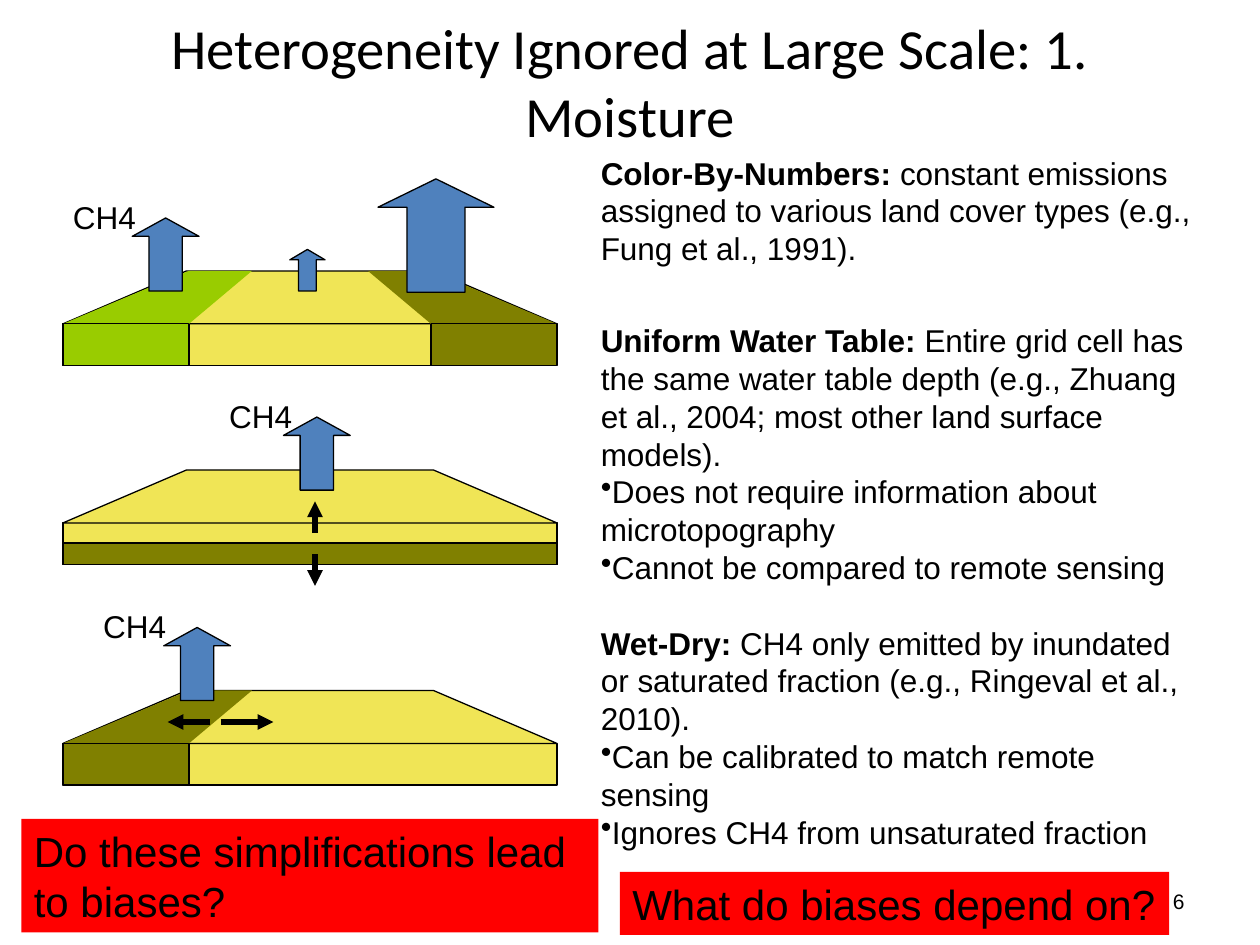
from dataclasses import dataclass

from lxml import etree
from pptx import Presentation
from pptx.dml.color import RGBColor
from pptx.enum.shapes import MSO_CONNECTOR, MSO_SHAPE
from pptx.enum.text import MSO_ANCHOR, MSO_AUTO_SIZE, PP_ALIGN
from pptx.oxml.ns import qn
from pptx.util import Inches, Pt

RECTANGLE = MSO_SHAPE.RECTANGLE
TRIANGLE = MSO_SHAPE.RIGHT_TRIANGLE
UP_ARROW = MSO_SHAPE.UP_ARROW
STRAIGHT = MSO_CONNECTOR.STRAIGHT
TOP, MIDDLE = MSO_ANCHOR.TOP, MSO_ANCHOR.MIDDLE
LEFT, CENTER, RIGHT = PP_ALIGN.LEFT, PP_ALIGN.CENTER, PP_ALIGN.RIGHT

BLACK = RGBColor(0x00, 0x00, 0x00)
SAND = RGBColor(0xF0, 0xE5, 0x56)
GREEN = RGBColor(0x99, 0xCC, 0x00)
OLIVE = RGBColor(0x80, 0x80, 0x00)
BLUE = RGBColor(0x4F, 0x81, 0xBD)
RED = RGBColor(0xFF, 0x00, 0x00)

# Shared geometry of the three land slabs, in inches
SLAB_LEFT, SLAB_WIDTH = 0.5, 3.92
SLAB_RIGHT = SLAB_LEFT + SLAB_WIDTH
SURFACE, THICKNESS = 0.42, 0.33
BEVEL = 0.98
WEDGE, WEDGE_TIP = 1.0, 0.5
MOISTURE, WATER_TABLE, WET_DRY = 2.15, 3.73, 5.48


@dataclass
class Emission:
    left: float
    top: float
    width: float = 0.53
    height: float = 0.58
    head: float = 0.275


@dataclass
class Motion:
    start: tuple[float, float]
    end: tuple[float, float]


@dataclass
class Note:
    top: float
    height: float
    heading: str
    body: str
    bullets: tuple[str, ...] = ()


@dataclass
class Label:
    text: str
    left: float
    top: float
    width: float
    height: float
    size: float = 18
    font: str = "Arial"
    align: PP_ALIGN = LEFT
    anchor: MSO_ANCHOR = TOP
    wrap: bool = True
    fill: RGBColor | None = None


EMISSIONS = [
    Emission(1.05, 1.73),
    Emission(2.3, 1.98, 0.28, 0.33, 0.296),
    Emission(3, 1.42, 0.92, 0.9, 0.25),
    Emission(2.25, 3.31),
    Emission(1.3, 4.98),
]
MOTIONS = [
    Motion((1.75, 5.73), (2.17, 5.73)),
    Motion((1.67, 5.73), (1.33, 5.73)),
    Motion((2.5, 4.23), (2.5, 3.98)),
    Motion((2.5, 4.4), (2.5, 4.65)),
]
NOTES = [
    Note(1.17, 1, "Color-By-Numbers:",
         " constant emissions assigned to various land cover types "
         "(e.g., Fung et al., 1991)."),
    Note(2.5, 2.22, "Uniform Water Table:",
         " Entire grid cell has the same water table depth (e.g., Zhuang "
         "et al., 2004; most other land surface models).",
         ("Does not require information about microtopography",
          "Cannot be compared to remote sensing")),
    Note(4.9, 1.9, "Wet-Dry:",
         " CH4 only emitted by inundated or saturated fraction "
         "(e.g., Ringeval et al., 2010).",
         ("Can be calibrated to match remote sensing",
          "Ignores CH4 from unsaturated fraction")),
]
GAS_LABELS = [(0.48, 1.52), (1.72, 3.1), (0.72, 4.77)]
LABELS = [
    Label("Heterogeneity Ignored at Large Scale: 1. Moisture", 0.5, 0.17, 9, 0.95,
          32.4, "Calibri", CENTER, MIDDLE),
    Label("6", 7.17, 6.95, 2.33, 0.4, 12, align=RIGHT, anchor=MIDDLE),
    *(Label("CH4", left, top, 0.7, 0.4, wrap=False) for left, top in GAS_LABELS),
    Label("Do these simplifications lead to biases?", 0.17, 6.5, 4.58, 0.9, 24, fill=RED),
    Label("What do biases depend on?", 4.92, 6.92, 4.36, 0.5, 24, wrap=False, fill=RED),
]


def paint(shape, fill: RGBColor, outlined: bool = True) -> None:
    shape.shadow.inherit = False
    shape.fill.solid()
    shape.fill.fore_color.rgb = fill
    if outlined:
        shape.line.color.rgb = BLACK
        shape.line.width = Pt(0.75)
    else:
        shape.line.fill.background()


def add_preset(page, kind, left: float, top: float, width: float, height: float,
               fill: RGBColor, outlined: bool = True):
    shape = page.shapes.add_shape(kind, Inches(left), Inches(top),
                                  Inches(width), Inches(height))
    paint(shape, fill, outlined)
    return shape


def add_slab(page, top: float) -> None:
    edge = top + SURFACE
    add_preset(page, RECTANGLE, SLAB_LEFT, edge, SLAB_WIDTH, THICKNESS, SAND)
    outline = page.shapes.build_freeform(Inches(SLAB_RIGHT), Inches(edge))
    corners = [(SLAB_RIGHT - BEVEL, top), (SLAB_LEFT + BEVEL, top), (SLAB_LEFT, edge)]
    outline.add_line_segments([(Inches(x), Inches(y)) for x, y in corners], close=True)
    paint(outline.convert_to_shape(), SAND)


def add_wedge(page, top: float, fill: RGBColor, on_left: bool = True) -> None:
    """Colour one end of a slab: sloping side, front face and inner tip."""
    left = SLAB_LEFT if on_left else SLAB_RIGHT - WEDGE
    tip_left = left + WEDGE if on_left else left - WEDGE_TIP
    side = add_preset(page, TRIANGLE, left, top, WEDGE, SURFACE, fill, False)
    add_preset(page, RECTANGLE, left, top + SURFACE, WEDGE, THICKNESS, fill)
    tip = add_preset(page, TRIANGLE, tip_left, top, WEDGE_TIP, SURFACE, fill, False)
    tip.rotation = 180
    if on_left:
        for triangle in (side, tip):
            triangle.element.spPr.find(qn("a:xfrm")).set("flipH", "1")


def add_emission(page, emission: Emission) -> None:
    arrow = add_preset(page, UP_ARROW, emission.left, emission.top,
                       emission.width, emission.height, BLUE)
    arrow.adjustments[0] = 0.5
    arrow.adjustments[1] = emission.head


def add_motion(page, motion: Motion) -> None:
    points = [Inches(value) for value in (*motion.start, *motion.end)]
    arrow = page.shapes.add_connector(STRAIGHT, *points)
    arrow.line.color.rgb = BLACK
    arrow.line.width = Pt(3)
    etree.SubElement(arrow.line._get_or_add_ln(), qn("a:tailEnd"), type="triangle")
    etree.SubElement(arrow.element.spPr, qn("a:effectLst"))


def add_span(para, text: str, size: float = 18, font: str = "Arial",
             bold: bool = False) -> None:
    span = para.add_run()
    span.text = text
    span.font.size = Pt(size)
    span.font.name = font
    span.font.bold = bold
    span.font.color.rgb = BLACK


def add_label(page, label: Label) -> None:
    box = page.shapes.add_textbox(Inches(label.left), Inches(label.top),
                                  Inches(label.width), Inches(label.height))
    if label.fill is not None:
        paint(box, label.fill, False)
    frame = box.text_frame
    frame.word_wrap = label.wrap
    frame.vertical_anchor = label.anchor
    para = frame.paragraphs[0]
    para.alignment = label.align
    para.line_spacing = Pt(label.size * 1.2)
    add_span(para, label.text, label.size, label.font)


def add_note(page, note: Note) -> None:
    box = page.shapes.add_textbox(Inches(4.67), Inches(note.top),
                                  Inches(4.93), Inches(note.height))
    frame = box.text_frame
    frame.word_wrap = True
    frame.auto_size = MSO_AUTO_SIZE.SHAPE_TO_FIT_TEXT
    add_span(frame.paragraphs[0], note.heading, bold=True)
    add_span(frame.paragraphs[0], note.body)
    for bullet in note.bullets:
        para = frame.add_paragraph()
        etree.SubElement(para._p.get_or_add_pPr(), qn("a:buChar"), char="•")
        add_span(para, bullet)
    for para in frame.paragraphs:
        para.line_spacing = Pt(21.6)


def main() -> None:
    deck = Presentation()
    deck.slide_width, deck.slide_height = Inches(10), Inches(7.5)
    page = deck.slides.add_slide(deck.slide_layouts[6])

    # Land slabs with their wet and dry parts
    for top in (MOISTURE, WATER_TABLE, WET_DRY):
        add_slab(page, top)
    add_wedge(page, MOISTURE, GREEN)
    add_wedge(page, MOISTURE, OLIVE, on_left=False)
    add_preset(page, RECTANGLE, SLAB_LEFT, 4.31, SLAB_WIDTH, 0.17, OLIVE)
    add_wedge(page, WET_DRY, OLIVE)

    # Arrows
    for motion in MOTIONS:
        add_motion(page, motion)
    for emission in EMISSIONS:
        add_emission(page, emission)

    # Text
    for note in NOTES:
        add_note(page, note)
    for label in LABELS:
        add_label(page, label)

    deck.save("out.pptx")


if __name__ == "__main__":
    main()
